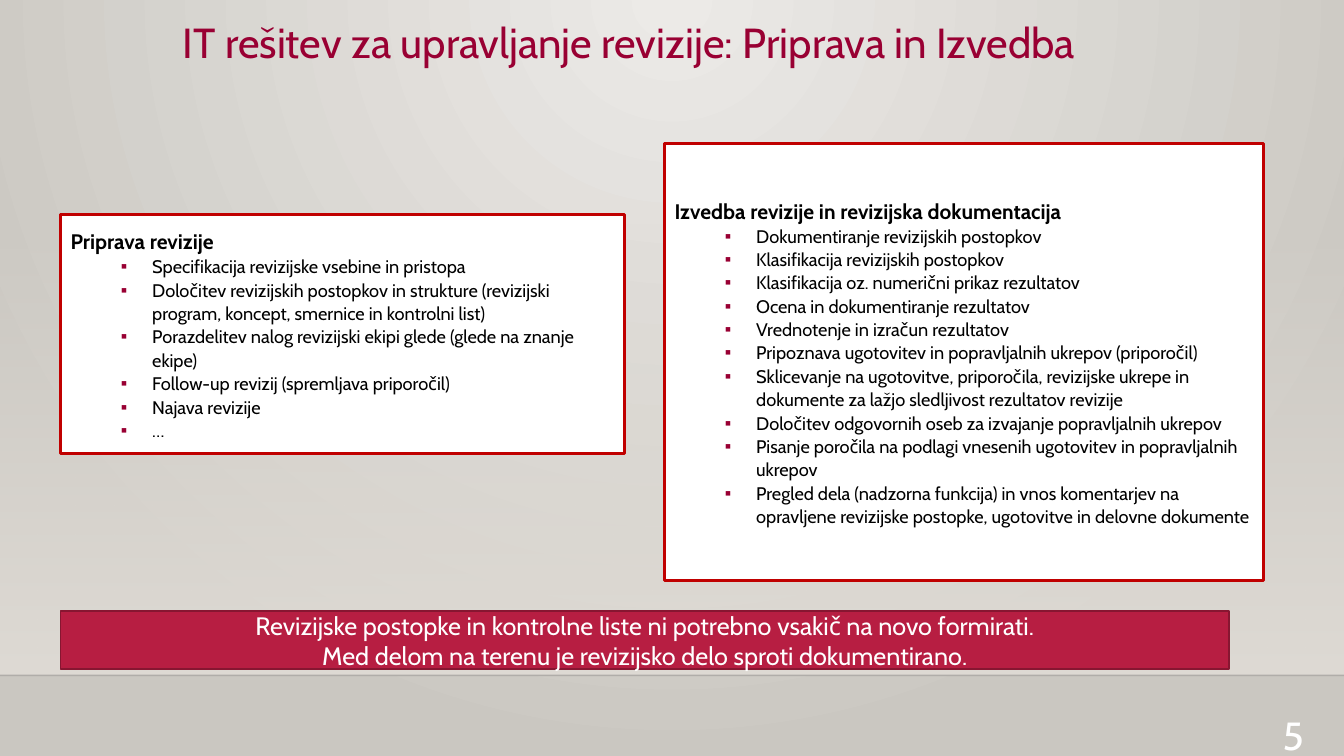
from lxml import etree
from pptx import Presentation, util as u
from pptx.dml.color import RGBColor
from pptx.enum import shapes, text
from pptx.oxml.ns import qn

PREPARATION = [
    "Specifikacija revizijske vsebine in pristopa",
    "Določitev revizijskih postopkov in strukture (revizijski program, koncept, smernice in kontrolni list)",
    "Porazdelitev nalog revizijski ekipi glede (glede na znanje ekipe)",
    "Follow-up revizij (spremljava priporočil)",
    "Najava revizije",
    "…",
]
EXECUTION = [
    "Dokumentiranje revizijskih postopkov",
    "Klasifikacija revizijskih postopkov",
    "Klasifikacija oz. numerični prikaz rezultatov",
    "Ocena in dokumentiranje rezultatov",
    "Vrednotenje in izračun rezultatov",
    "Pripoznava ugotovitev in popravljalnih ukrepov (priporočil)",
    "Sklicevanje na ugotovitve, priporočila, revizijske ukrepe in dokumente za lažjo sledljivost rezultatov revizije",
    "Določitev odgovornih oseb za izvajanje popravljalnih ukrepov",
    "Pisanje poročila na podlagi vnesenih ugotovitev in popravljalnih ukrepov",
    "Pregled dela (nadzorna funkcija) in vnos komentarjev na opravljene revizijske postopke, ugotovitve in delovne dokumente",
]


def rgb(value):
    return RGBColor.from_string(value)


def add(parent, tag, **attrs):
    return etree.SubElement(parent, qn(tag), attrs)


class Deck:
    font = "Cabin"
    accent = "990033"
    border = "C00000"

    def __init__(self, width, height):
        self.prs = Presentation()
        self.prs.slide_width = u.Inches(width)
        self.prs.slide_height = u.Inches(height)
        self.s = self.prs.slides.add_slide(self.prs.slide_layouts[3])

    def area(self, x, y, w, h):
        across, down = self.prs.slide_width / 100, self.prs.slide_height / 100
        return int(x * across), int(y * down), int(w * across), int(h * down)

    def move(self, sp, area):
        sp.left, sp.top, sp.width, sp.height = self.area(*area)

    def paint(self, sp, fill, line, width):
        sp.fill.solid()
        sp.fill.fore_color.rgb = rgb(fill)
        sp.line.color.rgb = rgb(line)
        sp.line.width = u.Pt(width)

    def gradient(self, fill, colors):
        fill.gradient()
        for stop, color in zip(fill.gradient_stops, colors):
            stop.color.rgb = rgb(color)

    def typeset(self, tf, lines, size, color, align, spacing=1.0):
        tf.word_wrap = True
        tf.auto_size = text.MSO_AUTO_SIZE.NONE
        tf.text = "\n".join(lines)
        for p in tf.paragraphs:
            p.alignment = align
            p.line_spacing = spacing
            p.space_before = u.Pt(0)
            for r in p.runs:
                r.font.name = self.font
                r.font.size = u.Pt(size)
                r.font.color.rgb = rgb(color)

    def background(self, inner, outer):
        self.gradient(self.s.background.fill, (inner, outer))
        grad = self.s.element.find(".//" + qn("a:gradFill"))
        grad.remove(grad.find(qn("a:lin")))
        circle = add(grad, "a:path", path="circle")
        add(circle, "a:fillToRect", l="43000", t="0", r="43000", b="100000")

    def fade(self, area, color):
        sp = self.s.shapes.add_shape(shapes.MSO_SHAPE.RECTANGLE, *self.area(*area))
        sp.shadow.inherit = False
        self.gradient(sp.fill, (color, color))
        sp.fill.gradient_angle = 270
        add(sp.element.find(".//" + qn("a:srgbClr")), "a:alpha", val="0")
        sp.line.fill.background()
        sp.element.getparent().insert(2, sp.element)

    def rule(self, y, color, opacity):
        left, top, width, _ = self.area(0, y, 100, 0)
        line = self.s.shapes.add_connector(
            shapes.MSO_CONNECTOR.STRAIGHT, left, top, left + width, top)
        line.line.color.rgb = rgb(color)
        line.line.width = u.Pt(1)
        add(line.element.find(".//" + qn("a:srgbClr")), "a:alpha", val=str(opacity * 1000))
        add(line.element.spPr, "a:effectLst")

    def title(self, area, words):
        sp = self.s.shapes.title
        self.move(sp, area)
        self.typeset(sp.text_frame, [words], 30, self.accent, text.PP_ALIGN.CENTER, 0.9)

    def panel(self, index, area, heading, items):
        sp = self.s.placeholders[index]
        self.move(sp, area)
        self.paint(sp, "FFFFFF", self.border, 2.25)
        tf = sp.text_frame
        tf.vertical_anchor = text.MSO_ANCHOR.MIDDLE
        self.typeset(tf, [heading] + items, 13, "000000", text.PP_ALIGN.LEFT, 1.07)
        head, *points = tf.paragraphs
        pPr = head._p.get_or_add_pPr()
        pPr.set("marL", "0")
        pPr.set("indent", "0")
        add(pPr, "a:buNone")
        head.runs[0].font.size = u.Pt(15)
        head.runs[0].font.bold = True
        for p in points:
            p.level = 1
            pPr = p._p.get_or_add_pPr()
            pPr.set("marL", str(u.Inches(0.81)))
            pPr.set("indent", str(u.Inches(-0.31)))
            add(add(pPr, "a:buClr"), "a:srgbClr", val=self.accent)
            add(pPr, "a:buChar", char="▪")

    def banner(self, area, lines):
        sp = self.s.shapes.add_shape(shapes.MSO_SHAPE.RECTANGLE, *self.area(*area))
        sp.shadow.inherit = False
        self.paint(sp, "B71E42", "871631", 1.25)
        sp.text_frame.vertical_anchor = text.MSO_ANCHOR.MIDDLE
        self.typeset(sp.text_frame, lines, 18, "FFFFFF", text.PP_ALIGN.CENTER)

    def number(self, area, words):
        sp = self.s.shapes.add_textbox(*self.area(*area))
        self.typeset(sp.text_frame, [words], 28, "FFFFFF", text.PP_ALIGN.RIGHT)


def main():
    deck = Deck(13.33, 7.5)
    deck.background("ECEAE7", "CAC7C1")
    deck.fade((0, 29.47, 100, 59.86), "DFDBD5")
    deck.rule(89.33, "000001", 20)
    deck.title((1.28, 1.6, 91.07, 8.8), "IT rešitev za upravljanje revizije: Priprava in Izvedba")
    deck.panel(1, (4.5, 28.4, 42, 31.6), "Priprava revizije", PREPARATION)
    deck.panel(2, (49.44, 18.93, 44.56, 57.87),
               "Izvedba revizije in revizijska dokumentacija", EXECUTION)
    deck.banner((4.5, 80.8, 86.95, 7.73), [
        "Revizijske postopke in kontrolne liste ni potrebno vsakič na novo formirati.",
        "Med delom na terenu je revizijsko delo sproti dokumentirano.",
    ])
    deck.number((94.07, 93.47, 3.68, 6.53), "5")
    deck.prs.save("out.pptx")


if __name__ == "__main__":
    main()
